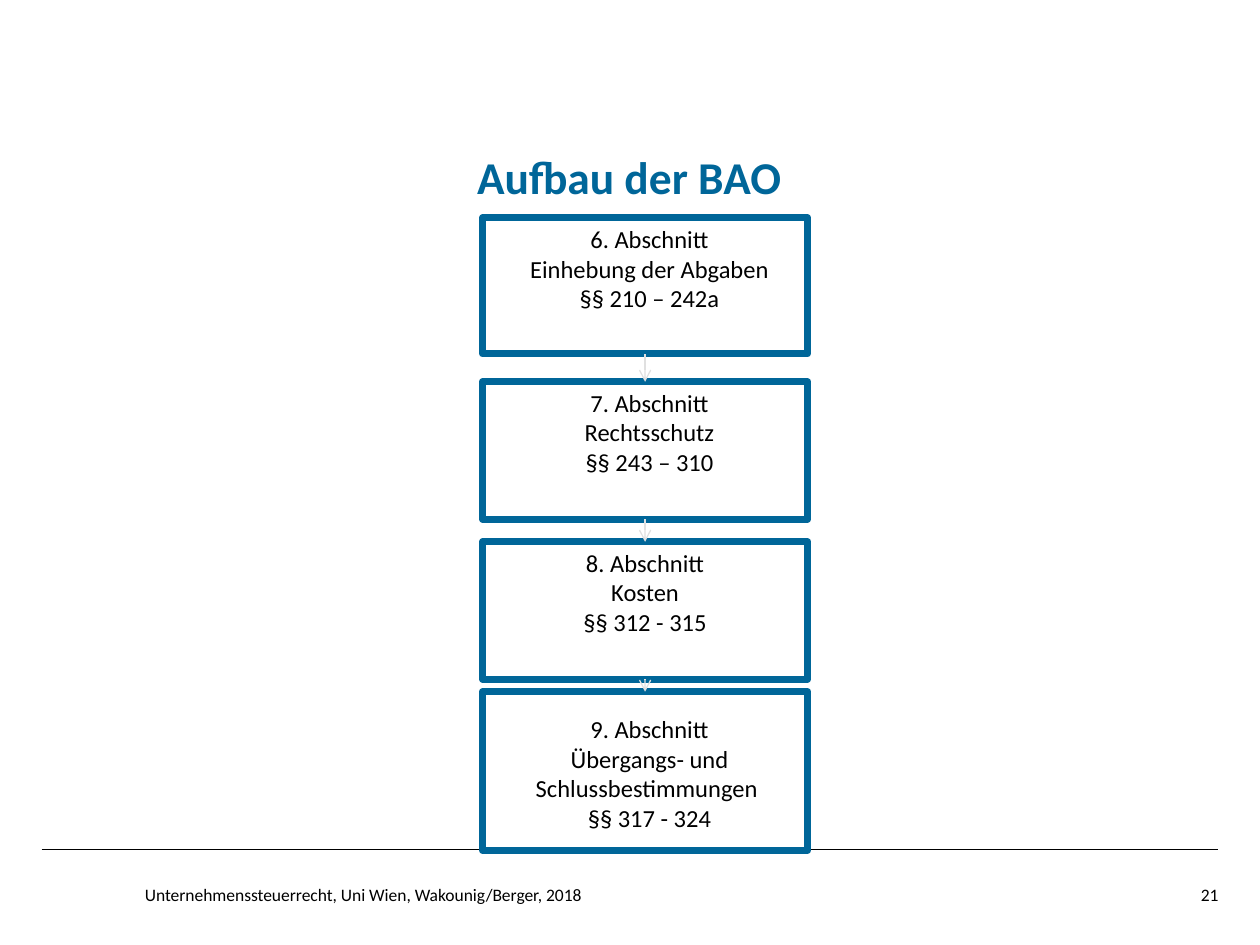
from lxml import etree
from pptx import Presentation
from pptx.dml.color import RGBColor
from pptx.enum.shapes import MSO_CONNECTOR, MSO_SHAPE
from pptx.enum.text import MSO_ANCHOR, MSO_AUTO_SIZE, PP_ALIGN
from pptx.oxml.ns import qn
from pptx.util import Inches, Pt

STRAIGHT, RECT = MSO_CONNECTOR.STRAIGHT, MSO_SHAPE.RECTANGLE
TOP, BOTTOM = MSO_ANCHOR.TOP, MSO_ANCHOR.BOTTOM
NO_FIT, GROW = MSO_AUTO_SIZE.NONE, MSO_AUTO_SIZE.SHAPE_TO_FIT_TEXT
LEFT, CENTER, RIGHT = PP_ALIGN.LEFT, PP_ALIGN.CENTER, PP_ALIGN.RIGHT
WIDTH, HEIGHT = Inches(10), Inches(7.5)
COLS, ROWS = 100, 75
BLUE, BLACK, GREY = "006699", "000000", "E0E0E0"
NO_INSET = dict(margin_left=0, margin_top=0, margin_right=0, margin_bottom=0)


def color(value):
    return RGBColor.from_string(value)


class Deck:
    """Style and current slide; lengths are columns and rows of the grid."""

    font = "Calibri"

    def __init__(self):
        self.prs = Presentation()
        self.prs.slide_width, self.prs.slide_height = WIDTH, HEIGHT
        self.s = self.prs.slides.add_slide(self.prs.slide_layouts[5])

    def grid(self, *lengths):
        units = (WIDTH / COLS, HEIGHT / ROWS)
        return [round(n * units[i % 2]) for i, n in enumerate(lengths)]

    def set_text(self, sp, lines, size, align, ink=BLACK, bold=False, spacing=None, **frame):
        tf = sp.text_frame
        for name, value in dict(word_wrap=True, **frame).items():
            setattr(tf, name, value)
        tf.text = "\n".join(lines)
        font = dict(name=self.font, size=Pt(size), bold=bold)
        for p in tf.paragraphs:
            p.alignment, p.line_spacing = align, spacing
            for r in p.runs:
                r.font.color.rgb = color(ink)
                for name, value in font.items():
                    setattr(r.font, name, value)

    def set_line(self, sp, ink, points, tag, **attributes):
        sp.line.color.rgb = color(ink)
        sp.line.width = Pt(points)
        if tag:
            etree.SubElement(sp.element.spPr.find(qn("a:ln")), qn(tag), **attributes)

    def title(self, text, *box):
        sp = self.s.shapes.title
        sp.left, sp.top, sp.width, sp.height = self.grid(*box)
        self.set_text(sp, [text], 26, CENTER, BLUE, True, 0.9, auto_size=NO_FIT,
                      vertical_anchor=BOTTOM, **NO_INSET)

    def text(self, lines, box, size, align, **frame):
        sp = self.s.shapes.add_textbox(*self.grid(*box))
        self.set_text(sp, lines, size, align, vertical_anchor=TOP, **frame)

    def frame(self, *box):
        sp = self.s.shapes.add_shape(RECT, *self.grid(*box))
        sp.shadow.inherit = False
        sp.fill.background()
        self.set_line(sp, BLUE, 4, "a:round")

    def line(self, *ends, ink=BLACK, arrow=False):
        sp = self.s.shapes.add_connector(STRAIGHT, *self.grid(*ends))
        self.set_line(sp, ink, 0.75, "a:tailEnd" if arrow else None, type="arrow")
        etree.SubElement(sp.element.spPr, qn("a:effectLst"))


def main():
    deck = Deck()

    # Footer rule and title
    deck.line(3.3, 67.4, 96.7, 67.4)
    deck.title("Aufbau der BAO", 3.3, 7.3, 93.3, 8.9)

    # Sections: frame top and height, text box, lines
    left, width = 38.3, 25.8
    sections = [
        (17.3, 10.8, (39.8, 17.3, 23.5, 8.1),
         ["6. Abschnitt", "Einhebung der Abgaben", "§§ 210 – 242a"]),
        (30.3, 10.9, (39.8, 30.3, 23.5, 8.1),
         ["7. Abschnitt", "Rechtsschutz", "§§ 243 – 310"]),
        (43, 10.9, (left, 43, width, 8.1),
         ["8. Abschnitt", "Kosten", "§§ 312 - 315"]),
        (54.9, 12.6, (39.8, 56.2, 23.5, 10.4),
         ["9. Abschnitt", "Übergangs- und Schlussbestimmungen ", "§§ 317 - 324"]),
    ]
    for top, height, _, _ in sections:
        deck.frame(left, top, width, height)

    # Arrows from each frame to the next
    middle = left + width / 2
    for (top, height, _, _), following in zip(sections, sections[1:]):
        deck.line(middle, top + height, middle, following[0], ink=GREY, arrow=True)

    for _, _, box, lines in sections:
        deck.text(lines, box, 14, CENTER, auto_size=GROW)

    # Footer
    deck.text(["Unternehmenssteuerrecht, Uni Wien, Wakounig/Berger, 2018"],
              (11.5, 70.2, 76.1, 4), 10, LEFT, **NO_INSET)
    deck.text(["21"], (87.6, 70.2, 9.1, 4), 10, RIGHT, **NO_INSET)

    deck.prs.save("out.pptx")


if __name__ == "__main__":
    main()
